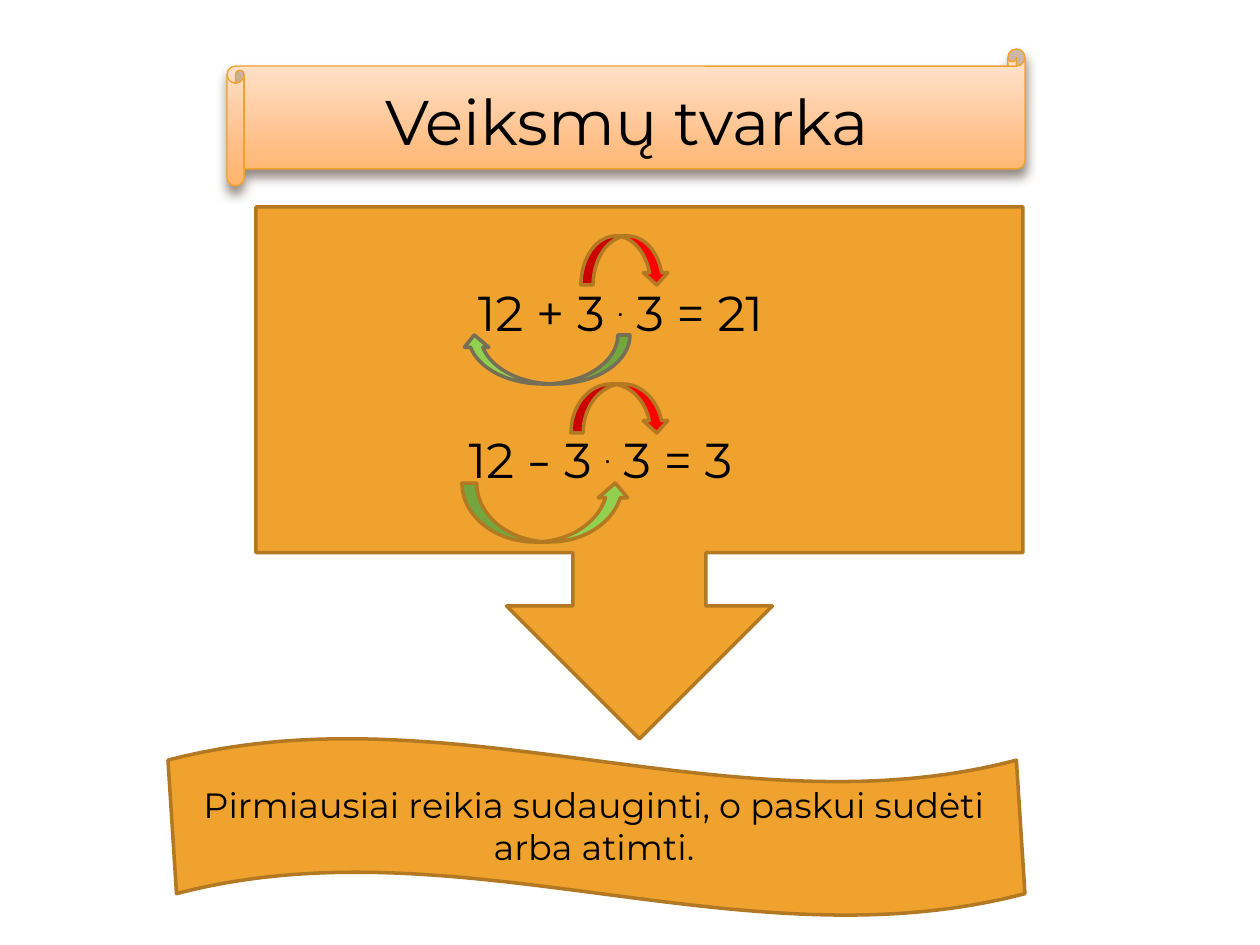
from lxml import etree
from pptx import Presentation
from pptx import util as u
from pptx.dml.color import RGBColor
from pptx.enum import shapes, text
from pptx.oxml import ns

PX = 914400 / 126
FONT = "Montserrat"
ORANGE, BROWN, RED, GREEN = "F0A22E", "B27822", "FF0000", "92D050"
KIND = shapes.MSO_SHAPE


def px(*lengths):
    return [u.Emu(round(length * PX)) for length in lengths]


def color(value):
    return RGBColor.from_string(value)


def add_child(parent, tag, **attributes):
    return etree.SubElement(parent, ns.qn(tag), attributes)


def add_shape(page, kind, place, fill, line=BROWN, width=2, turn=0):
    shape = page.shapes.add_shape(kind, *px(*place))
    shape.shadow.inherit = False
    shape.fill.solid()
    shape.fill.fore_color.rgb = color(fill)
    shape.line.color.rgb = color(line)
    shape.line.width = u.Pt(width)
    shape.rotation = turn
    return shape


def set_gradient(shape, stops):
    """Fill from top to bottom with (percent, colour) stops."""
    shape.fill.gradient()
    shape.fill.gradient_angle = 270
    stop_list = shape.element.spPr.find(ns.qn("a:gradFill")).find(ns.qn("a:gsLst"))
    for stop in list(stop_list):
        stop_list.remove(stop)
    for percent, value in stops:
        stop = add_child(stop_list, "a:gs", pos=str(percent * 1000))
        add_child(stop, "a:srgbClr", val=value)


def set_shadow(shape, value, blur, distance, opacity):
    """Cast a shadow straight down."""
    effects = shape.element.spPr.find(ns.qn("a:effectLst"))
    shadow = add_child(effects, "a:outerShdw", blurRad=str(u.Pt(blur)),
                       dist=str(u.Pt(distance)), dir="5400000", rotWithShape="0")
    shade = add_child(shadow, "a:srgbClr", val=value)
    add_child(shade, "a:alpha", val=str(opacity * 1000))


def write(box, parts, size, anchor=text.MSO_ANCHOR.MIDDLE):
    """Write one centred paragraph and return its runs."""
    frame = box.text_frame
    frame.word_wrap = True
    frame.auto_size = text.MSO_AUTO_SIZE.NONE
    frame.vertical_anchor = anchor
    para = frame.paragraphs[0]
    para.alignment = text.PP_ALIGN.CENTER
    para.font.name = FONT
    para.font.size = u.Pt(size)
    para.font.color.rgb = color("000000")
    for part in parts:
        span = para.add_run()
        span.text = part
        if part == ".":  # raised dot as the multiplication sign
            span.font._element.set("baseline", "30000")
    return para.runs


def add_text(page, place, parts, size, **options):
    return write(page.shapes.add_textbox(*px(*place)), parts, size, **options)


def add_title(page, place, words):
    title = page.shapes.title
    title.left, title.top, title.width, title.height = px(*place)
    page.shapes.element.append(title.element)  # bring in front of the scroll
    write(title, [words], 36)


def main():
    deck = Presentation()
    deck.slide_width, deck.slide_height = px(1260, 945)
    page = deck.slides.add_slide(deck.slide_layouts[5])

    # Title on a scroll
    scroll = add_shape(page, KIND.HORIZONTAL_SCROLL, (227, 49, 798, 137),
                       ORANGE, ORANGE, 0.79)
    set_gradient(scroll, [(0, "FFE7D7"), (72, "FFBE84"), (100, "FFB468")])
    set_shadow(scroll, "4E3B30", 6, 4, 60)
    add_title(page, (244, 68, 766, 104), "Veiksmų tvarka")

    # Callout with the two equations
    add_shape(page, KIND.DOWN_ARROW_CALLOUT, (256, 207, 767, 532), ORANGE)
    add_text(page, (335, 276, 571, 111), ["12 + 3 ", ".", " 3 = 21"], 28,
             anchor=text.MSO_ANCHOR.TOP)
    difference = add_text(page, (-59, 423, 1319, 72),
                          ["12 ", "–", " 3 ", ".", " 3 = 3"], 28)
    difference[1].font.name = "Calibri"

    # Red arrows: first operation; green arrows: second operation
    add_shape(page, KIND.CURVED_DOWN_ARROW, (581, 236, 88, 49), RED)
    add_shape(page, KIND.CURVED_DOWN_ARROW, (571, 384, 98, 49), RED)
    add_shape(page, KIND.CURVED_DOWN_ARROW, (462, 335, 168, 49), GREEN,
              "776E56", turn=180)
    add_shape(page, KIND.CURVED_UP_ARROW, (462, 483, 168, 59), GREEN)

    # Rule on a wave
    wave = add_shape(page, KIND.WAVE, (168, 738, 857, 178), ORANGE)
    wave.adjustments[0] = 0.125
    wave.adjustments[1] = 0.005
    add_text(page, (186, 777, 816, 97),
             ["Pirmiausiai reikia sudauginti, o paskui sudėti arba atimti."], 20)

    deck.save("out.pptx")


if __name__ == "__main__":
    main()
